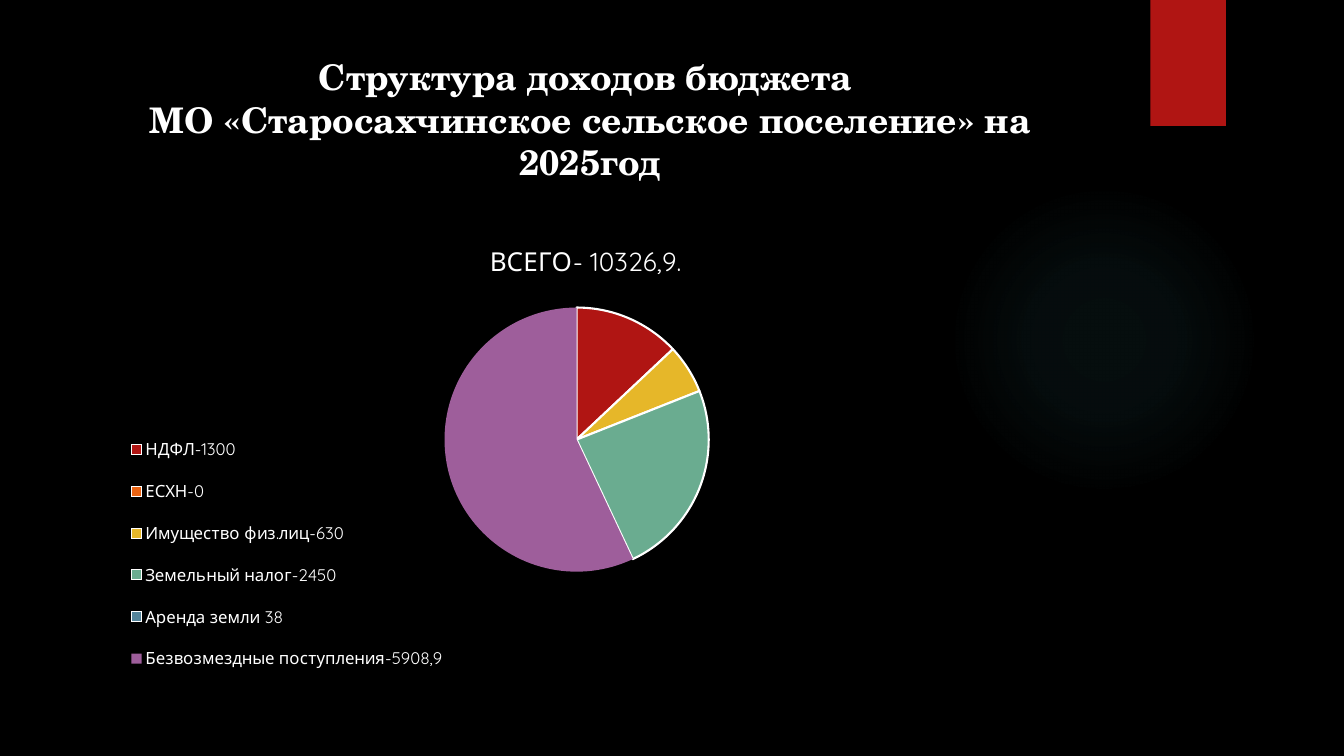
from lxml.etree import SubElement
from pptx import Presentation
from pptx.chart.data import CategoryChartData
from pptx.dml.color import RGBColor
from pptx.enum.chart import XL_CHART_TYPE, XL_LEGEND_POSITION
from pptx.enum.shapes import MSO_SHAPE
from pptx.enum.text import MSO_ANCHOR, MSO_AUTO_SIZE, PP_ALIGN
from pptx.oxml import parse_xml
from pptx.oxml.ns import nsdecls, qn
from pptx.util import Inches, Pt

WHITE = "FFFFFF"
HEADING = "Структура доходов бюджета \vМО «Старосахчинское сельское поселение» на 2025год"
TOTAL = "ВСЕГО- 10326,9."
INCOME = [
    ("НДФЛ-1300", 13, "B01513"),
    ("ЕСХН-0", 0, "EA6312"),
    ("Имущество физ.лиц-630", 6, "E6B729"),
    ("Земельный налог-2450", 24, "6AAC90"),
    ("Аренда земли 38", 0, "54849A"),
    ("Безвозмездные поступления-5908,9", 57, "9E5E9B"),
]


def paint(color_format, value):
    """Apply a hex colour to a colour format."""
    color_format.rgb = RGBColor.from_string(value)


def style_font(font, name, size, bold=None):
    """Give a font its face, size and the white text colour."""
    font.name, font.size, font.bold = name, Pt(size), bold
    paint(font.color, WHITE)


def add_plain_shape(slide, kind, box):
    """Add a shape without outline or shadow."""
    shape = slide.shapes.add_shape(kind, *map(Inches, box))
    shape.shadow.inherit = False
    shape.line.fill.background()
    return shape


def add_decor(slide, glow_box, ribbon_box):
    """Draw the faint round glow and the red ribbon."""
    glow = add_plain_shape(slide, MSO_SHAPE.OVAL, glow_box)
    stops = "".join(
        f'<a:gs pos="{position * 1000}"><a:srgbClr val="50B9C1">'
        f'<a:alpha val="{alpha * 1000}"/></a:srgbClr></a:gs>'
        for position, alpha in ((0, 7), (36, 6), (69, 0))
    )
    gradient = parse_xml(
        f'<a:gradFill {nsdecls("a")}><a:gsLst>{stops}</a:gsLst><a:path path="circle">'
        '<a:fillToRect l="50000" t="50000" r="50000" b="50000"/></a:path></a:gradFill>'
    )
    glow._element.spPr.find(qn("a:prstGeom")).addnext(gradient)
    ribbon = add_plain_shape(slide, MSO_SHAPE.RECTANGLE, ribbon_box)
    ribbon.fill.solid()
    paint(ribbon.fill.fore_color, "B01513")


def add_heading(slide, box):
    """Fill the title placeholder and move it to its box."""
    heading = slide.shapes.title
    heading.left, heading.top, heading.width, heading.height = map(Inches, box)
    frame = heading.text_frame
    frame.word_wrap = True
    frame.auto_size = MSO_AUTO_SIZE.NONE
    frame.vertical_anchor = MSO_ANCHOR.TOP
    frame.text = HEADING
    paragraph = frame.paragraphs[0]
    paragraph.alignment = PP_ALIGN.CENTER
    style_font(paragraph.font, "TeX Gyre Schola", 25.2, True)


def set_layout(part, index, target=None, **fractions):
    """Fix a chart part at fractions of the chart area."""
    for old in part.findall(qn("c:layout")):
        part.remove(old)
    layout = parse_xml(f'<c:layout {nsdecls("c")}><c:manualLayout/></c:layout>')
    manual = layout[0]
    if target:
        SubElement(manual, qn("c:layoutTarget"), val=target)
    for mode in ("xMode", "yMode"):
        SubElement(manual, qn(f"c:{mode}"), val="edge")
    for key, fraction in fractions.items():
        SubElement(manual, qn(f"c:{key}"), val=str(fraction))
    part.insert(index, layout)


def add_income_chart(slide, box):
    """Draw the pie of budget income with its title and legend."""
    income = CategoryChartData()
    income.categories = [label for label, _, _ in INCOME]
    income.add_series("Series 1", [share for _, share, _ in INCOME])
    chart = slide.shapes.add_chart(XL_CHART_TYPE.PIE, *map(Inches, box), income).chart
    style_font(chart.font, "Quicksand", 10)

    total = chart.chart_title
    total.text_frame.text = TOTAL
    style_font(total.text_frame.paragraphs[0].font, "Quicksand", 18.6, False)
    set_layout(total._element, 1, x=0.4, y=0.03)

    chart.has_legend = True
    legend = chart.legend
    legend.position = XL_LEGEND_POSITION.BOTTOM
    legend.include_in_layout = False
    style_font(legend.font, "Quicksand", 12)
    set_layout(legend._element, 1, x=0.04, y=0.41, w=0.33, h=0.57)

    set_layout(chart._chartSpace.chart.plotArea, 0, "inner", x=0.36, y=0.17, w=0.26, h=0.57)
    pie = chart.plots[0]
    pie.vary_by_categories = True
    for index, (_, _, color) in enumerate(INCOME):
        style = pie.series[0].points[index].format
        style.fill.solid()
        paint(style.fill.fore_color, color)
        if index < len(INCOME) - 1:
            paint(style.line.color, WHITE)
            style.line.width = Pt(1.5)
        else:
            style.line.fill.background()


def main():
    """Build and save the budget income slide."""
    deck = Presentation()
    deck.slide_width, deck.slide_height = Inches(13.33), Inches(7.5)
    slide = deck.slides.add_slide(deck.slide_layouts[5])
    slide.background.fill.solid()
    paint(slide.background.fill.fore_color, "000000")
    add_decor(slide, (9.41, 1.83, 3.08, 3.08), (11.41, 0, 0.75, 1.25))
    add_heading(slide, (0.71, 0.5, 10.29, 1.53))
    add_income_chart(slide, (0.78, 2.21, 10.08, 4.73))
    deck.save("out.pptx")


if __name__ == "__main__":
    main()
